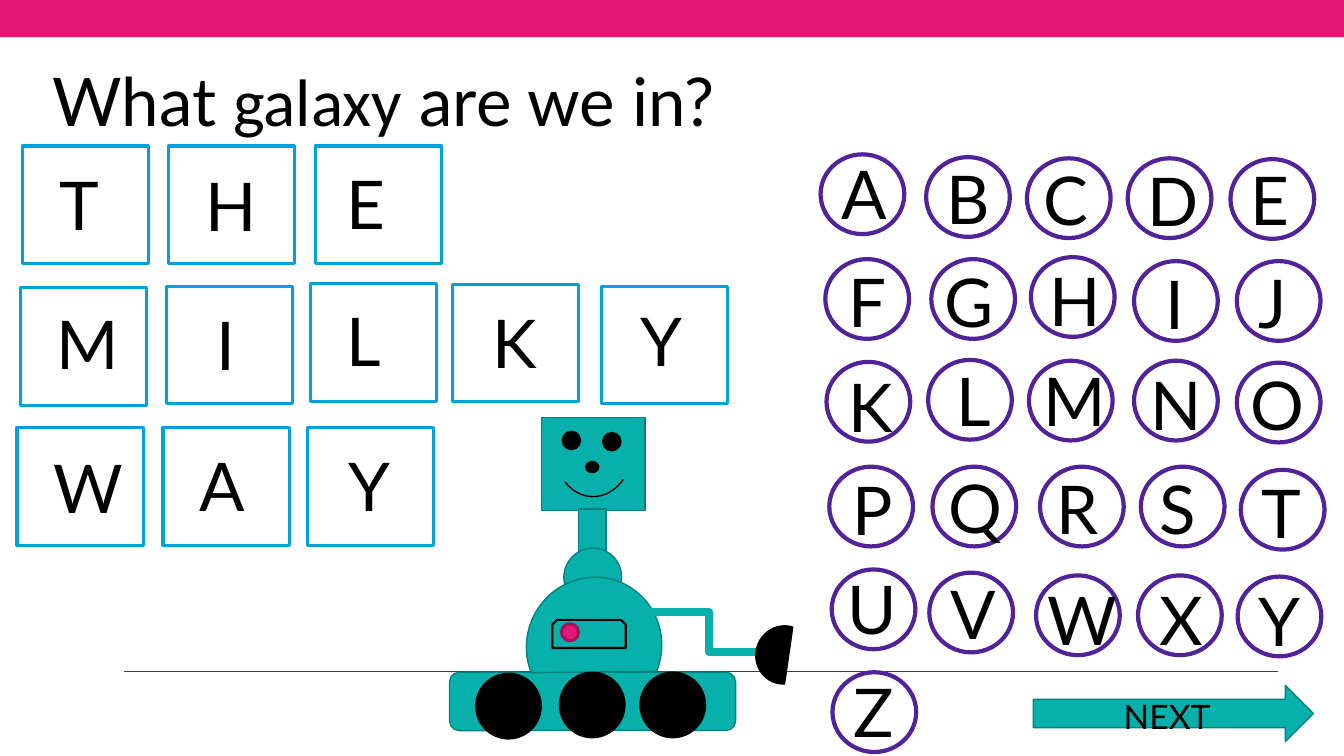
from lxml import etree
from pptx import Presentation
from pptx.dml.color import RGBColor
from pptx.enum.shapes import MSO_CONNECTOR, MSO_SHAPE
from pptx.enum.text import MSO_ANCHOR, MSO_AUTO_SIZE
from pptx.oxml.ns import qn
from pptx.util import Cm, Pt

RECT = MSO_SHAPE.RECTANGLE
ROUNDED = MSO_SHAPE.ROUNDED_RECTANGLE
OVAL = MSO_SHAPE.OVAL
CHORD = MSO_SHAPE.CHORD
ARC = MSO_SHAPE.ARC
SNIPPED = MSO_SHAPE.SNIP_2_SAME_RECTANGLE
ARROW = MSO_SHAPE.RIGHT_ARROW
STRAIGHT = MSO_CONNECTOR.STRAIGHT
ELBOW = MSO_CONNECTOR.ELBOW
BOTTOM = MSO_ANCHOR.BOTTOM
TOP = MSO_ANCHOR.TOP
GROW = MSO_AUTO_SIZE.SHAPE_TO_FIT_TEXT
NO_FIT = MSO_AUTO_SIZE.NONE

COLORS = {
    "white": "FFFFFF", "black": "000000", "rule": "404040",
    "pink": "E21776", "dark pink": "A71157",
    "teal": "07B0AB", "dark teal": "05827F",
    "purple": "522398", "blue": "00A1DE",
}

# letter: circle left, circle top, letter left, letter top
ALPHABET = {
    "A": (20.68, 3.89, 20.96, 3.71), "B": (23.34, 3.96, 23.6, 3.84),
    "C": (25.88, 3.99, 26.06, 3.86), "D": (28.42, 3.99, 28.68, 3.89),
    "E": (31.01, 4.01, 31.27, 3.86), "F": (20.8, 6.53, 21.13, 6.43),
    "G": (23.47, 6.53, 23.55, 6.43), "H": (25.98, 6.48, 26.19, 6.4),
    "I": (28.58, 6.58, 29.13, 6.48), "J": (31.17, 6.58, 31.47, 6.45),
    "K": (20.83, 9.12, 21.13, 9.09), "L": (23.39, 9.07, 23.85, 8.94),
    "M": (25.93, 9.09, 26.04, 8.94), "N": (28.58, 9.09, 28.75, 9.02),
    "O": (31.17, 9.14, 31.27, 9.04), "P": (20.9, 11.76, 21.23, 11.68),
    "Q": (23.5, 11.76, 23.65, 11.63), "R": (26.21, 11.76, 26.37, 11.66),
    "S": (28.75, 11.76, 28.96, 11.66), "T": (31.27, 11.84, 31.55, 11.76),
    "U": (20.96, 14.35, 21.11, 14.17), "V": (23.42, 14.43, 23.7, 14.3),
    "W": (26.11, 14.5, 26.14, 14.45), "X": (28.68, 14.5, 28.96, 14.45),
    "Y": (31.19, 14.53, 31.47, 14.48), "Z": (20.98, 16.94, 21.26, 16.76),
}
LETTER_WIDTHS = {"G": 1.68, "H": 1.63, "J": 2.06, "W": 2.18}

# letter, tile left, tile top, letter left, letter top
ANSWER = [
    ("T", 0.56, 3.68, 1.24, 3.99), ("H", 4.24, 3.68, 4.93, 4.01),
    ("E", 7.95, 3.68, 8.48, 3.96),
    ("M", 0.51, 7.24, 1.17, 7.49), ("I", 4.19, 7.21, 5.21, 7.52),
    ("L", 7.82, 7.14, 8.48, 7.42), ("K", 11.4, 7.16, 12.17, 7.47),
    ("Y", 15.16, 7.21, 15.9, 7.42),
    ("W", 0.43, 10.77, 1.09, 11.13), ("A", 4.11, 10.77, 4.78, 11.07),
    ("Y", 7.75, 10.77, 8.53, 11.07),
]


class SlideBuilder:
    font = "Lato"
    letter_size = 48
    letter_height = 2.31

    def __init__(self, page):
        self.page = page

    def color(self, name):
        return RGBColor.from_string(COLORS[name])

    def shape(self, kind, area, fill="teal", line="dark teal", width=1,
              rotation=0, adjustments=()):
        """Add a preset shape; None leaves out its fill or line."""
        shape = self.page.shapes.add_shape(kind, *map(Cm, area))
        shape.shadow.inherit = False
        shape.rotation = rotation
        for index, value in enumerate(adjustments):
            shape.adjustments[index] = value
        if fill:
            shape.fill.solid()
            shape.fill.fore_color.rgb = self.color(fill)
        else:
            shape.fill.background()
        if line:
            shape.line.color.rgb = self.color(line)
            shape.line.width = Pt(width)
        else:
            shape.line.fill.background()

    def text(self, area, spans, size=letter_size, anchor=TOP, fit=GROW):
        """Add one line of text made of (text, font) spans."""
        box = self.page.shapes.add_textbox(*map(Cm, area))
        frame_format = {"word_wrap": True, "vertical_anchor": anchor,
                        "auto_size": fit}
        for name, value in frame_format.items():
            setattr(box.text_frame, name, value)
        para = box.text_frame.paragraphs[0]
        for words, font in spans:
            span = para.add_run()
            span.text = words
            for name, value in {"name": font, "size": Pt(size)}.items():
                setattr(span.font, name, value)
            span.font.color.rgb = self.color("black")

    def letter(self, letter, left, top, width):
        self.text((left, top, width, self.letter_height),
                  [(letter, self.font)])

    def connector(self, kind, ends, color, width, bend=None):
        """Add a line; bend is the share of its width before the turn."""
        line = self.page.shapes.add_connector(kind, *map(Cm, ends))
        line.line.color.rgb = self.color(color)
        line.line.width = Pt(width)
        properties = line._element.spPr
        etree.SubElement(properties, qn("a:effectLst"))
        if bend is not None:
            guides = properties.find(qn("a:prstGeom")).find(qn("a:avLst"))
            etree.SubElement(guides, qn("a:gd"), name="adj1",
                             fmla=f"val {round(bend * 100000)}")


def draw_alphabet(builder):
    for left, top, _, _ in ALPHABET.values():
        builder.shape(OVAL, (left, top, 2.11, 2.01), "white", "purple", 3)
    for letter, (_, _, left, top) in ALPHABET.items():
        builder.letter(letter, left, top, LETTER_WIDTHS.get(letter, 1.88))


def draw_answer(builder):
    for _, left, top, _, _ in ANSWER:
        builder.shape(RECT, (left, top, 3.18, 2.97), "white", "blue", 2.25)
    for letter, _, _, left, top in ANSWER:
        builder.letter(letter, left, top, 1.7)


def draw_robot(builder):
    head = (13.64, 10.52, 2.62, 2.34)
    neck = (14.58, 12.83, 0.69, 1.45)
    for part in (head, neck):
        builder.shape(RECT, part)
    builder.shape(CHORD, (14.2, 13.82, 1.47, 1.45), rotation=112.3)
    builder.shape(CHORD, (13.23, 14.58, 3.48, 3.4), rotation=112)
    wheels = [(11.99, 16.97, 1.65, 1.65), (14.1, 16.94, 1.65, 1.65),
              (16.13, 16.94, 1.65, 1.65)]
    eyes = [(14.17, 10.87, 0.46, 0.46), (15.19, 10.9, 0.46, 0.46)]
    nose = (14.76, 11.63, 0.33, 0.28)
    for part in (*wheels, *eyes, nose):
        builder.shape(OVAL, part, "black", "black")
    builder.connector(ELBOW, (16.28, 15.42, 19.08, 16.43), "teal", 6, 0.57)
    builder.shape(CHORD, (19.05, 15.77, 1.42, 1.47), "black", "black",
                  rotation=17.4, adjustments=(43.05, 162))
    builder.shape(ARC, (13.84, 10.44, 2.24, 1.91), None, "black",
                  rotation=93, adjustments=(185.43, 24.61))
    builder.shape(SNIPPED, (13.92, 15.62, 1.85, 0.71), "teal", "black", 1.5)
    builder.shape(OVAL, (14.15, 15.72, 0.43, 0.43), "pink", "dark pink", 2.25)


def main():
    deck = Presentation()
    deck.slide_width, deck.slide_height = Cm(33.87), Cm(19.05)
    builder = SlideBuilder(deck.slides.add_slide(deck.slide_layouts[6]))

    builder.shape(RECT, (0, 0, 33.87, 0.94), "pink", None)
    builder.connector(STRAIGHT, (3.12, 16.92, 32.21, 16.92), "rule", 0.75)
    builder.shape(ROUNDED, (11.33, 16.94, 7.21, 1.47))
    builder.text((1.07, 1.07, 30.84, 2.59),
                 [("What ", "Lato"), ("galaxy", "Calibri"),
                  (" are we in?", "Lato")], anchor=BOTTOM, fit=NO_FIT)
    draw_alphabet(builder)
    builder.shape(ARROW, (26.04, 17.27, 7.06, 1.42))
    builder.text((28.07, 17.42, 5.7, 1.27), [("NEXT", "Lato")], size=24)
    draw_answer(builder)
    draw_robot(builder)
    deck.save("out.pptx")


if __name__ == "__main__":
    main()
